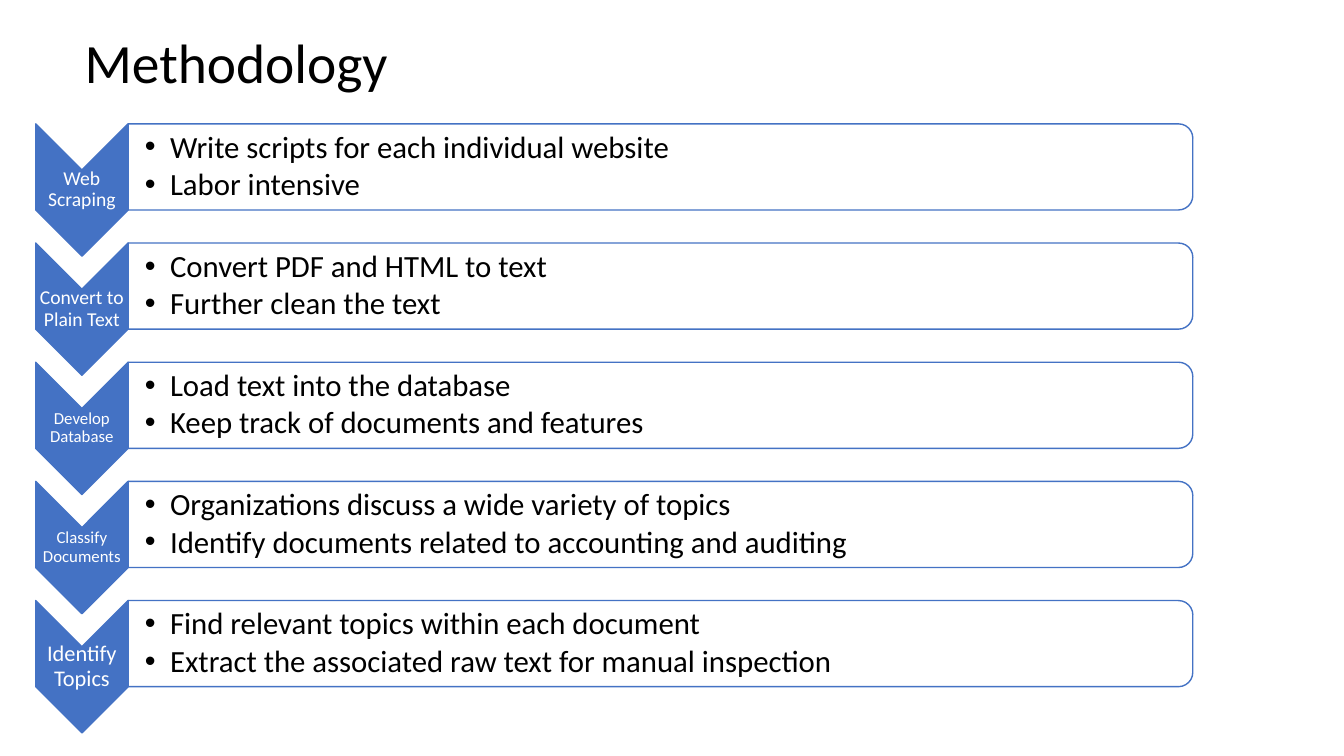
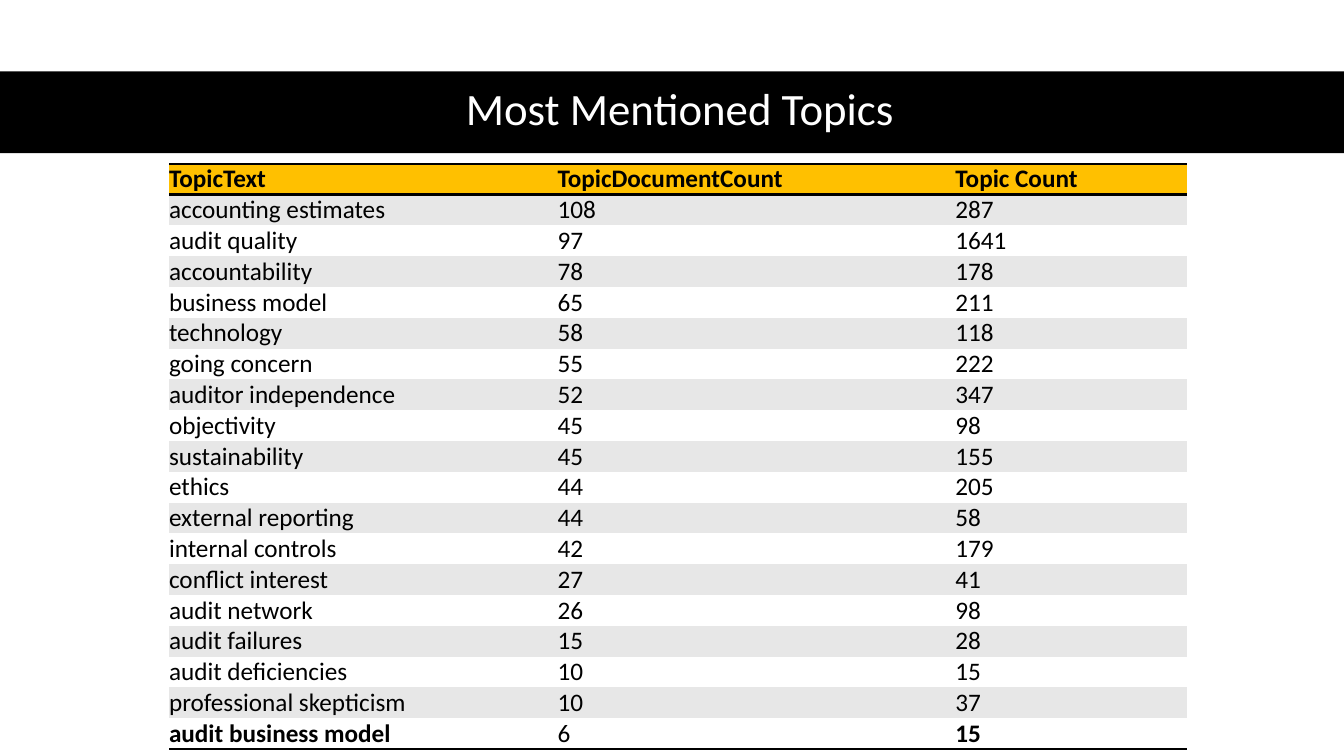
import lxml.etree
import pptx
import pptx.dml.color
import pptx.enum.shapes
import pptx.enum.text
import pptx.oxml.ns
import pptx.util

PX = 9525  # EMU in one px; the slide is 1280 x 720 px
FONT = "Calibri"
BLACK, WHITE = "000000", "FFFFFF"
BLUE, GOLD, GREY = "4472C4", "FFC000", "E7E7E7"
NO_GRID_STYLE = "{2D5ABB26-0587-4C30-8999-92F81FD0307C}"

SHAPE = pptx.enum.shapes.MSO_SHAPE
ALIGN = pptx.enum.text.PP_ALIGN
ANCHOR = pptx.enum.text.MSO_ANCHOR

STEPS = [
    ("Web Scraping", 14,
     ["Write scripts for each individual website", "Labor intensive"]),
    ("Convert to Plain Text", 14,
     ["Convert PDF and HTML to text", "Further clean the text"]),
    ("Develop Database", 12,
     ["Load text into the database", "Keep track of documents and features"]),
    ("Classify Documents", 12,
     ["Organizations discuss a wide variety of topics",
      "Identify documents related to accounting and auditing"]),
    ("Identify Topics", 16,
     ["Find relevant topics within each document",
      "Extract the associated raw text for manual inspection"]),
]

TOPICS = [
    ("TopicText", "TopicDocumentCount", "Topic Count"),
    ("accounting estimates", 108, 287),
    ("audit quality", 97, 1641),
    ("accountability", 78, 178),
    ("business model", 65, 211),
    ("technology", 58, 118),
    ("going concern", 55, 222),
    ("auditor independence", 52, 347),
    ("objectivity", 45, 98),
    ("sustainability", 45, 155),
    ("ethics", 44, 205),
    ("external reporting", 44, 58),
    ("internal controls", 42, 179),
    ("conflict interest", 27, 41),
    ("audit network", 26, 98),
    ("audit failures", 15, 28),
    ("audit deficiencies", 10, 15),
    ("professional skepticism", 10, 37),
    ("audit business model", 6, 15),
]


# Shared helpers
def emu(*lengths):
    return [pptx.util.Emu(round(n * PX)) for n in lengths]


def rgb(color):
    return pptx.dml.color.RGBColor.from_string(color)


def sub(parent, tag, **attrs):
    return lxml.etree.SubElement(parent, pptx.oxml.ns.qn(tag), attrs)


def set_insets(target, left, top, right, bottom):
    (target.margin_left, target.margin_top,
     target.margin_right, target.margin_bottom) = emu(left, top, right, bottom)


def style_paragraph(p, size, color, align=ALIGN.LEFT, bold=False, spacing=0.9):
    p.alignment = align
    p.line_spacing = spacing
    for r in p.runs:
        r.font.name = FONT
        r.font.size = pptx.util.Pt(size)
        r.font.bold = bold
        r.font.color.rgb = rgb(color)


def add_filled(slide, kind, box, fill, line=None, turned=False):
    """Place a shape so that box is what it covers, also after a quarter turn."""
    x, y, w, h = box
    if turned:
        x, y, w, h = x + (w - h) / 2, y + (h - w) / 2, h, w
    sp = slide.shapes.add_shape(kind, *emu(x, y, w, h))
    sp.rotation = 90 if turned else 0
    sp.shadow.inherit = False
    sp.fill.solid()
    sp.fill.fore_color.rgb = rgb(fill)
    if line:
        sp.line.color.rgb = rgb(line)
        sp.line.width = pptx.util.Pt(1)
    else:
        sp.line.fill.background()
    return sp


def add_text(slide, box, lines, size, color, align, insets):
    tf = slide.shapes.add_textbox(*emu(*box)).text_frame
    tf.word_wrap = True
    tf.vertical_anchor = ANCHOR.MIDDLE
    set_insets(tf, *insets)
    tf.text = "\n".join(lines)
    for p in tf.paragraphs:
        style_paragraph(p, size, color, align)
    return tf


def add_bullets(tf, indent, gap):
    for p in tf.paragraphs:
        p.space_after = pptx.util.Pt(gap)
        pPr = p._p.get_or_add_pPr()
        pPr.set("marL", str(indent * PX))
        pPr.set("indent", str(-indent * PX))
        sub(pPr, "a:buFont", typeface="Arial")
        sub(pPr, "a:buChar", char="•")


def set_title(slide, box, text, size, color, align):
    sp = slide.shapes.title
    sp.left, sp.top, sp.width, sp.height = emu(*box)
    tf = sp.text_frame
    tf.text = text
    tf.word_wrap = True
    tf.auto_size = pptx.enum.text.MSO_AUTO_SIZE.NONE
    tf.vertical_anchor = ANCHOR.MIDDLE
    style_paragraph(tf.paragraphs[0], size, color, align)
    return sp


# Process list: a chevron and a panel for each step
def add_step(slide, box, label, label_size, lines):
    x, y, w, h = box
    chevron_w, panel_h = 88, 82
    add_filled(slide, SHAPE.CHEVRON, (x, y, chevron_w, h), BLUE, BLUE, turned=True)
    # The notch is half the chevron's width deep
    notch = chevron_w / 2
    add_text(slide, (x, y + notch, chevron_w, h - 2 * notch), [label],
             label_size, WHITE, ALIGN.CENTER, (1, 1, 1, 1))

    panel_x, panel_w = x + chevron_w, w - chevron_w
    panel = add_filled(slide, SHAPE.ROUND_2_SAME_RECTANGLE,
                       (panel_x, y, panel_w, panel_h), WHITE, BLUE, turned=True)
    sub(panel.fill._xPr.find(".//" + pptx.oxml.ns.qn("a:srgbClr")),
        "a:alpha", val="90000")
    tf = add_text(slide, (panel_x, y + 4, panel_w - 4, panel_h - 8), lines,
                  22, BLACK, ALIGN.LEFT, (16, 2, 2, 2))
    add_bullets(tf, 24, 3)


def add_process(slide, box, steps):
    x, y, w, h = box
    step_h = 126
    pitch = (h - step_h) / (len(steps) - 1)
    for i, step in enumerate(steps):
        add_step(slide, (x, y + i * pitch, w, step_h), *step)


# Topic table
def add_rule(cell, side):
    ln = sub(cell._tc.get_or_add_tcPr(), "a:ln" + side, w=str(pptx.util.Pt(2)))
    sub(sub(ln, "a:solidFill"), "a:srgbClr", val=BLACK)


def style_cell(cell, value, fill, bold, rules):
    cell.text = str(value)
    cell.vertical_anchor = ANCHOR.BOTTOM
    set_insets(cell, 0, 0, 0, 0)
    for side in rules:
        add_rule(cell, side)
    cell.fill.solid()
    cell.fill.fore_color.rgb = rgb(fill)
    style_paragraph(cell.text_frame.paragraphs[0], 18, BLACK, bold=bold, spacing=1.0)


def add_topic_table(slide, box, col_widths, rows):
    table = slide.shapes.add_table(len(rows), len(col_widths), *emu(*box)).table
    table.first_row = table.horz_banding = False
    tblPr = table._tbl.tblPr
    tblPr.find(pptx.oxml.ns.qn("a:tableStyleId")).text = NO_GRID_STYLE
    for col, width in zip(table.columns, emu(*col_widths)):
        col.width = width
    last = len(rows) - 1
    for i, values in enumerate(rows):
        table.rows[i].height = emu(box[3] / len(rows))[0]
        fill = GOLD if i == 0 else GREY if i % 2 else WHITE
        rules = "TB" if i == 0 else "B" if i == last else ""
        for j, value in enumerate(values):
            bold = i == 0 or (i == last and j != 1)
            style_cell(table.cell(i, j), value, fill, bold, rules)


# Slides
def methodology_slide(prs, layout):
    slide = prs.slides.add_slide(layout)
    set_title(slide, (71, 37, 1084, 51), "Methodology", 39.6, BLACK, ALIGN.LEFT)
    add_process(slide, (34, 118, 1102, 580), STEPS)


def topics_slide(prs, layout):
    slide = prs.slides.add_slide(layout)
    title = set_title(slide, (59, 67, 1177, 78), "Most Mentioned Topics",
                      32, WHITE, ALIGN.CENTER)
    band = add_filled(slide, SHAPE.RECTANGLE, (0, 68, 1280, 78), BLACK)
    title.element.addprevious(band.element)  # band goes behind the title
    add_topic_table(slide, (161, 156, 970, 554), (370, 379, 221), TOPICS)


def main():
    prs = pptx.Presentation()
    prs.slide_width, prs.slide_height = emu(1280, 720)
    title_only = prs.slide_layouts.get_by_name("Title Only")
    methodology_slide(prs, title_only)
    topics_slide(prs, title_only)
    prs.save("out.pptx")


if __name__ == "__main__":
    main()
